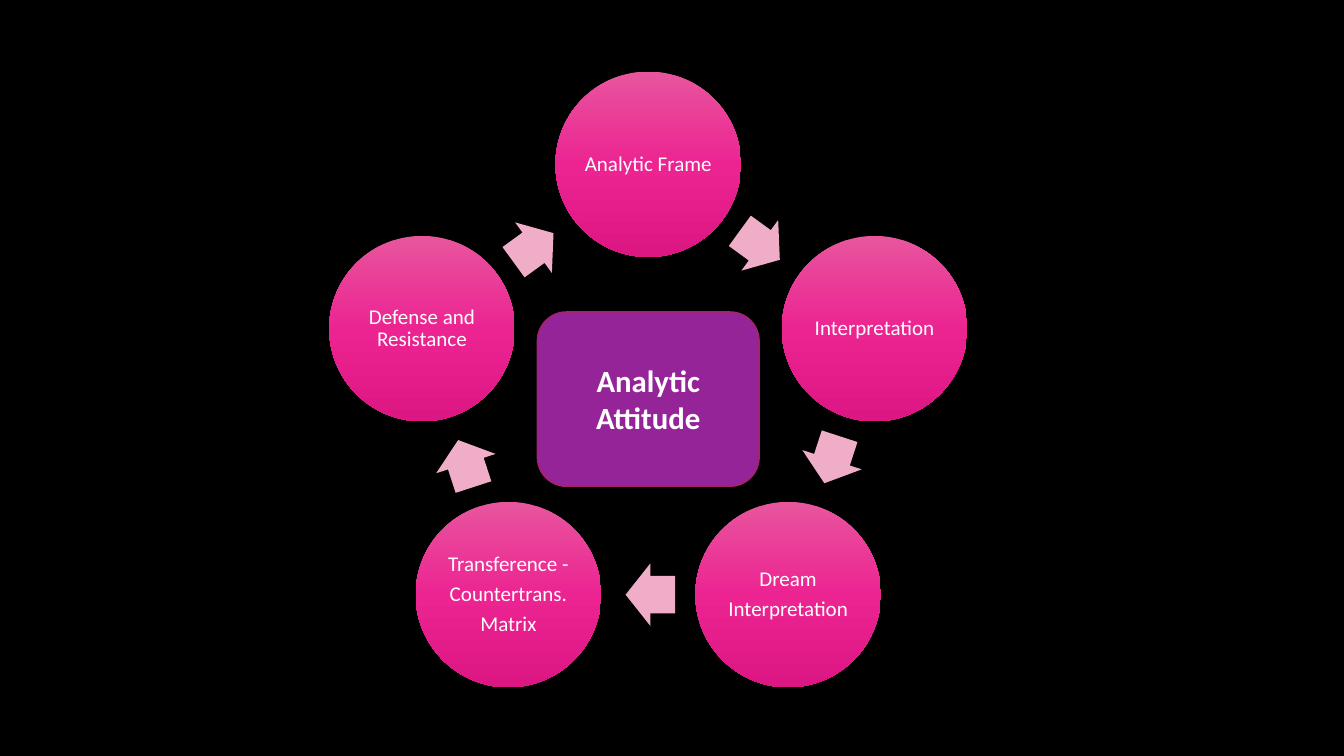
from copy import deepcopy
from dataclasses import dataclass
from math import cos, radians, sin

from pptx import Presentation
from pptx.dml.color import RGBColor
from pptx.enum import shapes, text
from pptx.oxml import ns
from pptx.util import Inches, Pt


@dataclass(frozen=True)
class Theme:
    font: str = "Calibri"
    step_size: float = 15
    core_size: float = 22
    background: str = "000000"
    ink: str = "FFFFFF"
    arrow: str = "EFADC7"
    core: str = "962499"
    core_edge: str = "A8216B"
    step_gradient: tuple = ((0, "E8559D"), (0.5, "EC2492"), (1, "DC1683"))


STEPS = (
    ["Analytic Frame"],
    ["Interpretation"],
    ["Dream", "Interpretation"],
    ["Transference -", "Countertrans.", "Matrix"],
    ["Defense and Resistance"],
)
CENTER_X, CENTER_Y = 6.43, 3.99
RING_RADIUS = 2.36
STEP_DIAMETER = 1.84
ARROW_WIDTH, ARROW_HEIGHT = 0.49, 0.62
ARROW_LAG = 0.02  # arrows sit slightly before the midpoint between two steps
CORE_WIDTH, CORE_HEIGHT = 2.2, 1.73


def ring_point(angle, radius):
    """Point on the ring, with the angle in degrees clockwise from the top."""
    turn = radians(angle)
    return CENTER_X + radius * sin(turn), CENTER_Y - radius * cos(turn)


def write(shape, lines, *, font, size, color, bold=False,
          line_spacing=1.0, gap=0, inset=None):
    frame = shape.text_frame
    frame.word_wrap = True
    frame.vertical_anchor = text.MSO_ANCHOR.MIDDLE
    if inset is not None:
        frame.margin_left = frame.margin_right = Inches(inset)
        frame.margin_top = frame.margin_bottom = Inches(inset)
    for index, line in enumerate(lines):
        paragraph = frame.paragraphs[0] if index == 0 else frame.add_paragraph()
        paragraph.alignment = text.PP_ALIGN.CENTER
        paragraph.line_spacing = line_spacing
        paragraph.space_after = Pt(gap)
        run = paragraph.add_run()
        run.text = line
        run.font.name = font
        run.font.size = Pt(size)
        run.font.bold = bold
        run.font.color.rgb = RGBColor.from_string(color)


class CycleSlide:
    def __init__(self, slide, theme):
        self.slide = slide
        self.theme = theme
        fill = slide.background.fill
        fill.solid()
        fill.fore_color.rgb = RGBColor.from_string(theme.background)

    def centered_shape(self, kind, x, y, width, height, color=None):
        shape = self.slide.shapes.add_shape(
            kind, Inches(x - width / 2), Inches(y - height / 2),
            Inches(width), Inches(height))
        shape.shadow.inherit = False
        shape.line.fill.background()
        if color:
            shape.fill.solid()
            shape.fill.fore_color.rgb = RGBColor.from_string(color)
        return shape

    def shade(self, shape):
        """Fill with the theme's three-stop gradient, top to bottom."""
        fill = shape.fill
        fill.gradient()
        fill.gradient_angle = 270
        stop_list = shape.element.spPr.find(ns.qn("a:gradFill")).find(ns.qn("a:gsLst"))
        stop_list.append(deepcopy(stop_list[-1]))
        for stop, (position, color) in zip(fill.gradient_stops, self.theme.step_gradient):
            stop.position = position
            stop.color.rgb = RGBColor.from_string(color)

    def step(self, lines, angle):
        x, y = ring_point(angle, RING_RADIUS)
        circle = self.centered_shape(
            shapes.MSO_SHAPE.OVAL, x, y, STEP_DIAMETER, STEP_DIAMETER)
        self.shade(circle)
        write(circle, lines, font=self.theme.font, size=self.theme.step_size,
              color=self.theme.ink, line_spacing=0.9,
              gap=0.35 * self.theme.step_size, inset=0.02)

    def arrow(self, angle):
        x, y = ring_point(angle, RING_RADIUS * cos(radians(180 / len(STEPS))))
        x -= ARROW_LAG * cos(radians(angle))
        y -= ARROW_LAG * sin(radians(angle))
        arrow = self.centered_shape(
            shapes.MSO_SHAPE.RIGHT_ARROW, x, y, ARROW_WIDTH, ARROW_HEIGHT,
            self.theme.arrow)
        arrow.adjustments[0] = 0.6
        arrow.adjustments[1] = 0.5
        arrow.rotation = angle

    def core(self, caption):
        core = self.centered_shape(
            shapes.MSO_SHAPE.ROUNDED_RECTANGLE, CENTER_X, CENTER_Y - 0.03,
            CORE_WIDTH, CORE_HEIGHT, self.theme.core)
        core.line.color.rgb = RGBColor.from_string(self.theme.core_edge)
        core.line.width = Pt(1)
        write(core, [caption], font=self.theme.font, size=self.theme.core_size,
              color=self.theme.ink, bold=True)


def main():
    deck = Presentation()
    deck.slide_width, deck.slide_height = Inches(13.33), Inches(7.5)
    blank = deck.slide_layouts[6]
    cycle = CycleSlide(deck.slides.add_slide(blank), Theme())
    pitch = 360 / len(STEPS)
    for index, lines in enumerate(STEPS):
        cycle.step(lines, index * pitch)
        cycle.arrow((index + 0.5) * pitch)
    cycle.core("Analytic Attitude")
    deck.save("out.pptx")


if __name__ == "__main__":
    main()
